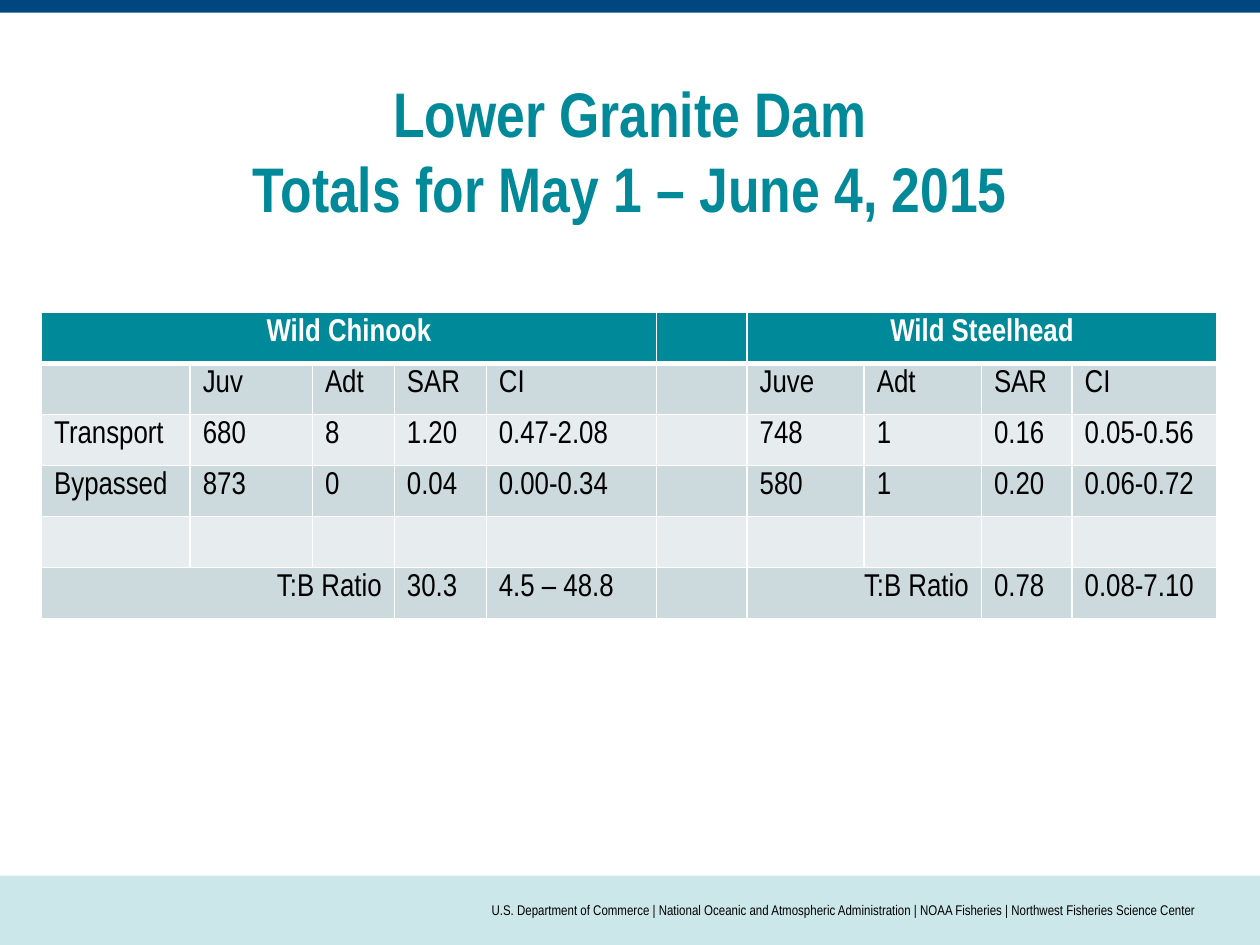
from lxml.etree import SubElement
from pptx import Presentation
from pptx.dml.color import RGBColor
from pptx.enum.shapes import MSO_SHAPE as Preset
from pptx.enum.text import MSO_ANCHOR as Anchor, PP_ALIGN as Align
from pptx.oxml.ns import qn
from pptx.util import Inches, Pt

# Content
TITLE = ["Lower Granite Dam", "Totals for May 1 – June 4, 2015"]
FOOTER = " | ".join([
    "U.S. Department of Commerce", "National Oceanic and Atmospheric Administration",
    "NOAA Fisheries", "Northwest Fisheries Science Center"])
ROWS = [
    ["Wild Chinook", "", "", "", "", "", "Wild Steelhead", "", "", ""],
    ["", "Juv", "Adt", "SAR", "CI", "", "Juve", "Adt", "SAR", "CI"],
    ["Transport", "680", "8", "1.20", "0.47-2.08", "", "748", "1", "0.16", "0.05-0.56"],
    ["Bypassed", "873", "0", "0.04", "0.00-0.34", "", "580", "1", "0.20", "0.06-0.72"],
    [""] * 10,
    ["T:B Ratio", "", "", "30.3", "4.5 – 48.8", "", "T:B Ratio", "", "0.78", "0.08-7.10"],
]
# (row, column): columns covered, alignment
SPANS = {(0, 0): (5, Align.CENTER), (0, 6): (4, Align.CENTER),
         (5, 0): (3, Align.RIGHT), (5, 6): (2, Align.RIGHT)}

# Grid and look
WIDTH, HEIGHT = 10, 7.5
TOP_BAND, FOOT_BAND = 0.1, 0.55
FOOT_TOP = HEIGHT - FOOT_BAND
COLUMNS = [1.18, 0.97, 0.65, 0.73, 1.35, 0.72, 0.93, 0.93, 0.72, 1.15]
ROW_HEIGHT = 0.405
TEAL, WHITE, BLACK = "008998", "FFFFFF", "000000"
STRIPES = ["E7EDEF", "CCDADD"]
FACE = "Arial Narrow"
TITLE_FONT = {"name": FACE, "size": Pt(36), "bold": True}
FOOTER_FONT = {"name": FACE, "size": Pt(8), "bold": False}
HEAD_FONT = {"name": FACE, "size": Pt(18), "bold": True}
BODY_FONT = {**HEAD_FONT, "bold": False}


def paint(target, color):
    target.solid()
    target.fore_color.rgb = RGBColor.from_string(color)


def style(paragraph, font, color, align):
    paragraph.alignment = align
    for key, value in font.items():
        setattr(paragraph.font, key, value)
    paint(paragraph.font.fill, color)


def add_band(slide, top, height, color):
    band = slide.shapes.add_shape(
        Preset.RECTANGLE, 0, Inches(top), Inches(WIDTH), Inches(height))
    band.shadow.inherit = False
    paint(band.fill, color)
    band.line.fill.background()


def add_text(slide, box, lines, font, color, align, inset):
    frame = slide.shapes.add_textbox(*map(Inches, box)).text_frame
    frame.word_wrap = True
    frame.vertical_anchor = Anchor.MIDDLE
    frame.margin_left = frame.margin_right = Inches(inset)
    paragraph = frame.paragraphs[0]
    for index, line in enumerate(lines):
        if index:
            paragraph.add_line_break()
        paragraph.add_run().text = line
    style(paragraph, font, color, align)
    for run in paragraph.runs:
        for key, value in font.items():
            setattr(run.font, key, value)
        paint(run.font.fill, color)


def add_borders(cell, widths):
    for side, width in widths.items():
        line = SubElement(cell._tc.get_or_add_tcPr(), qn(f"a:ln{side}"), w=str(Pt(width)))
        SubElement(SubElement(line, qn("a:solidFill")), qn("a:srgbClr"), val=WHITE)


def add_totals(slide):
    table = slide.shapes.add_table(
        len(ROWS), len(COLUMNS), Inches(0.33), Inches(2.48),
        Inches(sum(COLUMNS)), Inches(ROW_HEIGHT * len(ROWS))).table
    for column, width in zip(table.columns, COLUMNS):
        column.width = Inches(width)
    for r, values in enumerate(ROWS):
        table.rows[r].height = Inches(ROW_HEIGHT)
        head = r == 0
        for c, value in enumerate(values):
            cell = table.cell(r, c)
            # A thick rule parts the header from the body
            add_borders(cell, {"L": 1, "R": 1, "T": 3 if r == 1 else 1, "B": 3 if head else 1})
            paint(cell.fill, TEAL if head else STRIPES[r % 2])
            span, align = SPANS.get((r, c), (1, Align.LEFT))
            if span > 1:
                cell.merge(table.cell(r, c + span - 1))
            paragraph = cell.text_frame.paragraphs[0]
            font, color = (HEAD_FONT, WHITE) if head else (BODY_FONT, BLACK)
            style(paragraph, font, color, align)
            if value:
                run = paragraph.add_run()
                run.text = value
                for key, setting in font.items():
                    setattr(run.font, key, setting)
                paint(run.font.fill, color)


def main():
    deck = Presentation()
    deck.slide_width, deck.slide_height = Inches(WIDTH), Inches(HEIGHT)
    slide = deck.slides.add_slide(deck.slide_layouts[6])

    # Bands and footer
    add_band(slide, FOOT_TOP, FOOT_BAND, "CCE7EA")
    add_band(slide, 0, TOP_BAND, "00467F")
    add_text(slide, (2.5, FOOT_TOP, 7, FOOT_BAND), [FOOTER], FOOTER_FONT, BLACK, Align.RIGHT, 0)

    # Title and table
    add_text(slide, (0.5, 0.5, 9, 1.38), TITLE, TITLE_FONT, TEAL, Align.CENTER, 0.1)
    add_totals(slide)
    deck.save("out.pptx")


if __name__ == "__main__":
    main()
